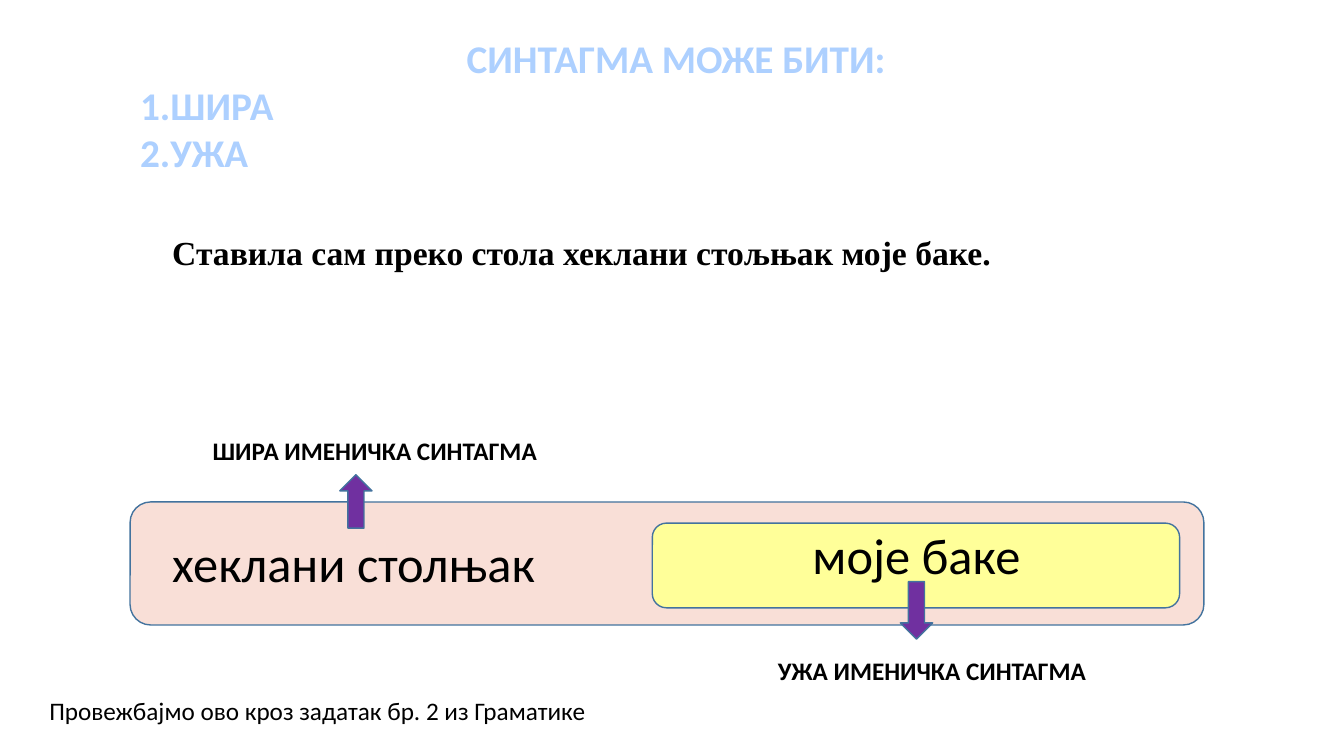
from dataclasses import dataclass

from lxml.etree import SubElement
from pptx import Presentation
from pptx.dml.color import RGBColor as Rgb
from pptx.enum.shapes import MSO_SHAPE as Kind
from pptx.enum.text import MSO_ANCHOR as Anchor, MSO_AUTO_SIZE as Auto, PP_ALIGN as Align
from pptx.oxml.ns import qn
from pptx.util import Inches, Pt

COLORS = {
    "head": "ADD0FF",
    "text": "000000",
    "wide": "F9DFD7",
    "narrow": "FFFF99",
    "arrow": "7030A0",
    "line": "43739E",
}
Box = tuple[float, float, float, float]


@dataclass
class Block:
    kind: Kind
    box: Box
    fill: str


@dataclass
class Label:
    text: str
    box: Box
    size: int
    bold: bool = False
    align: Align = Align.LEFT
    font: str = "Calibri"
    wrap: bool = True


BLOCKS = [
    Block(Kind.ROUNDED_RECTANGLE, (1.29, 4.98, 10.65, 1.22), "wide"),
    Block(Kind.ROUNDED_RECTANGLE, (6.47, 5.19, 5.23, 0.84), "narrow"),
]
LABELS = [
    Label("Ставила сам преко стола хеклани стољњак моје баке.",
          (1.61, 2.25, 8.41, 0.5), 24, True, font="Times New Roman", wrap=False),
    Label("ШИРА ИМЕНИЧКА СИНТАГМА", (2.01, 4.27, 8.23, 0.4), 18, True),
    Label("хеклани столњак", (1.61, 5.23, 4.27, 0.71), 36),
    Label("моје баке", (6.85, 5.15, 4.48, 0.71), 36, align=Align.CENTER),
    Label("УЖА ИМЕНИЧКА СИНТАГМА", (6.43, 6.45, 5.63, 0.4), 18, True, Align.CENTER),
    Label("Провежбајмо ово кроз задатак бр. 2 из Граматике",
          (0.39, 6.85, 5.58, 0.4), 18, wrap=False),
]
ARROWS = [
    Block(Kind.UP_ARROW, (3.37, 4.71, 0.32, 0.53), "arrow"),
    Block(Kind.DOWN_ARROW, (8.93, 5.77, 0.32, 0.57), "arrow"),
]


def tint(name: str) -> Rgb:
    return Rgb.from_string(COLORS[name])


def style(para, size: int, bold: bool, align: Align, color: str, face: str) -> None:
    para.alignment = align
    font = para.font
    font.name, font.size, font.bold = face, Pt(size), bold
    font.color.rgb = tint(color)


def fill_holder(holder, box: Box, lines: list[str], align: Align) -> None:
    """Move a placeholder and give it plain, unbulleted heading lines."""
    holder.left, holder.top, holder.width, holder.height = map(Inches, box)
    frame = holder.text_frame
    frame.text = "\n".join(lines)
    frame.auto_size = Auto.NONE
    frame.vertical_anchor = Anchor.TOP
    for para in frame.paragraphs:
        style(para, 28, True, align, "head", "Calibri")
        para.space_before = Pt(0)
        props = para._p.get_or_add_pPr()
        props.set("marL", "0")
        props.set("indent", "0")
        mark = SubElement(props, qn("a:buNone"))
        props.find(qn("a:defRPr")).addprevious(mark)


def add_block(slide, block: Block) -> None:
    shape = slide.shapes.add_shape(block.kind, *map(Inches, block.box))
    shape.shadow.inherit = False
    shape.fill.solid()
    shape.fill.fore_color.rgb = tint(block.fill)
    shape.line.color.rgb = tint("line")
    shape.line.width = Pt(1)


def add_label(slide, label: Label) -> None:
    frame = slide.shapes.add_textbox(*map(Inches, label.box)).text_frame
    frame.word_wrap = label.wrap
    frame.auto_size = Auto.SHAPE_TO_FIT_TEXT
    para = frame.paragraphs[0]
    para.text = label.text
    style(para, label.size, label.bold, label.align, "text", label.font)


def main() -> None:
    deck = Presentation()
    deck.slide_width, deck.slide_height = Inches(13.33), Inches(7.5)
    slide = deck.slides.add_slide(deck.slide_layouts[1])
    title, body = slide.placeholders
    fill_holder(title, (1.29, 0.29, 10.83, 0.57), ["СИНТАГМА МОЖЕ БИТИ:"], Align.CENTER)
    fill_holder(body, (1.29, 0.76, 10.83, 1.99), ["1.ШИРА", "2.УЖА"], Align.LEFT)
    for block in BLOCKS:
        add_block(slide, block)
    for label in LABELS:
        add_label(slide, label)
    for arrow in ARROWS:
        add_block(slide, arrow)
    deck.save("out.pptx")


if __name__ == "__main__":
    main()
